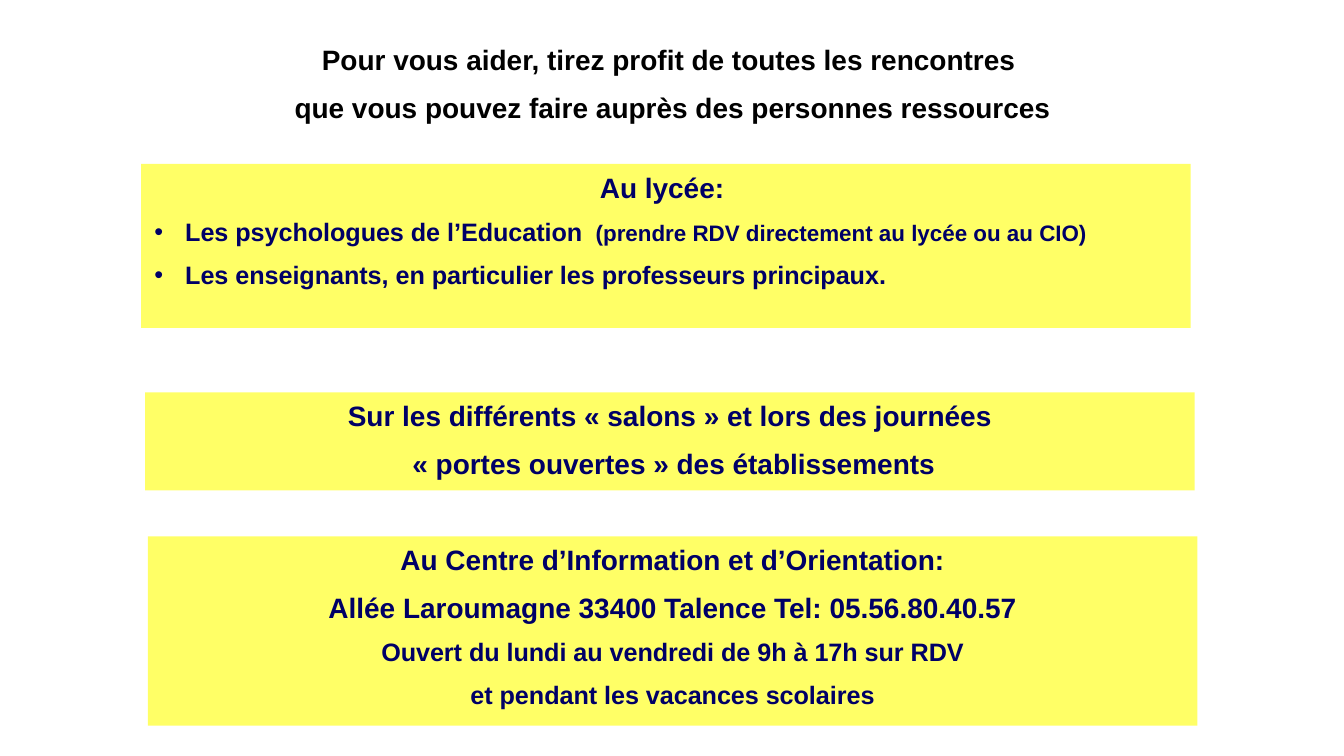
from pptx import Presentation, util as u
from pptx.dml.color import RGBColor
from pptx.enum import shapes, text
from pptx.oxml import parse_xml
from pptx.oxml.ns import nsdecls

THEME = {
    "font": "Arial",
    "black": RGBColor.from_string("000000"),
    "navy": RGBColor.from_string("000066"),
    "yellow": RGBColor.from_string("FFFF66"),
    "head": 15, "body": 13.5, "note": 12,
    "gap": 0.5,  # space before a paragraph, as a share of its type size
}
SLIDE_W = 10
SLIDE_H = SLIDE_W * 9 / 16
BLOCK_W = 7.81
INSET_X, INSET_Y = 0.1, 0.05
HANG = 0.23

# Content: each paragraph is (bulleted, runs), each run is (text, size name)
INTRO = [
    (False, [("Pour vous aider, tirez profit de toutes les rencontres ", "head")]),
    (False, [("que vous pouvez faire auprès des personnes ressources", "head")]),
]
SCHOOL = [
    (False, [("Au lycée: ", "head")]),
    (True, [("Les psychologues de l’Education ", "body"),
            (" (prendre RDV directement au lycée ou au CIO)", "note")]),
    (True, [("Les enseignants, en particulier les professeurs principaux.", "body")]),
]
FAIRS = [
    (False, [("Sur les différents « salons » et lors des journées", "head")]),
    (False, [(" « portes ouvertes » des établissements", "head")]),
]
CENTRE = [
    (False, [("Au Centre d’Information et d’Orientation:", "head")]),
    (False, [("Allée Laroumagne 33400 Talence Tel: 05.56.80.40.57", "head")]),
    (False, [("Ouvert du lundi au vendredi de 9h à 17h sur RDV", "body")]),
    (False, [("et pendant les vacances scolaires", "body")]),
]

# Blocks, back to front: left, top, height, text colour, fill, paragraphs
BLOCKS = [
    (1.10, 0.27, 0.73, "black", None, INTRO),
    (1.05, 1.22, 1.22, "navy", "yellow", SCHOOL),
    (1.10, 3.99, 1.41, "navy", "yellow", CENTRE),
    (1.08, 2.92, 0.73, "navy", "yellow", FAIRS),
]


def add_bullet(p):
    pPr = p._p.get_or_add_pPr()
    pPr.set("marL", str(u.Inches(HANG)))
    pPr.set("indent", str(-u.Inches(HANG)))
    pPr.append(parse_xml(f'<a:buFont {nsdecls("a")} typeface="{THEME["font"]}"/>'))
    pPr.append(parse_xml(f'<a:buChar {nsdecls("a")} char="•"/>'))


def write(tf, paragraphs, color):
    tf.word_wrap = True
    tf.vertical_anchor = text.MSO_ANCHOR.TOP
    tf.margin_left = tf.margin_right = u.Inches(INSET_X)
    tf.margin_top = tf.margin_bottom = u.Inches(INSET_Y)
    for i, (bulleted, runs) in enumerate(paragraphs):
        p = tf.add_paragraph() if i else tf.paragraphs[0]
        p.alignment = text.PP_ALIGN.LEFT if bulleted else text.PP_ALIGN.CENTER
        p.space_before = u.Pt(THEME["gap"] * THEME[runs[0][1]])
        if bulleted:
            add_bullet(p)
        for words, size in runs:
            r = p.add_run()
            r.text = words
            r.font.name = THEME["font"]
            r.font.size = u.Pt(THEME[size])
            r.font.bold = True
            r.font.color.rgb = THEME[color]


def add_block(s, left, top, height, color, fill, paragraphs):
    box = [u.Inches(v) for v in (left, top, BLOCK_W, height)]
    if fill:
        sp = s.shapes.add_shape(shapes.MSO_SHAPE.RECTANGLE, *box)
        sp.shadow.inherit = False
        sp.fill.solid()
        sp.fill.fore_color.rgb = THEME[fill]
        sp.line.fill.background()
    else:
        sp = s.shapes.add_textbox(*box)
    write(sp.text_frame, paragraphs, color)


def main():
    prs = Presentation()
    prs.slide_width, prs.slide_height = u.Inches(SLIDE_W), u.Inches(SLIDE_H)
    s = prs.slides.add_slide(prs.slide_layouts[6])
    for block in BLOCKS:
        add_block(s, *block)
    prs.save("out.pptx")


if __name__ == "__main__":
    main()
